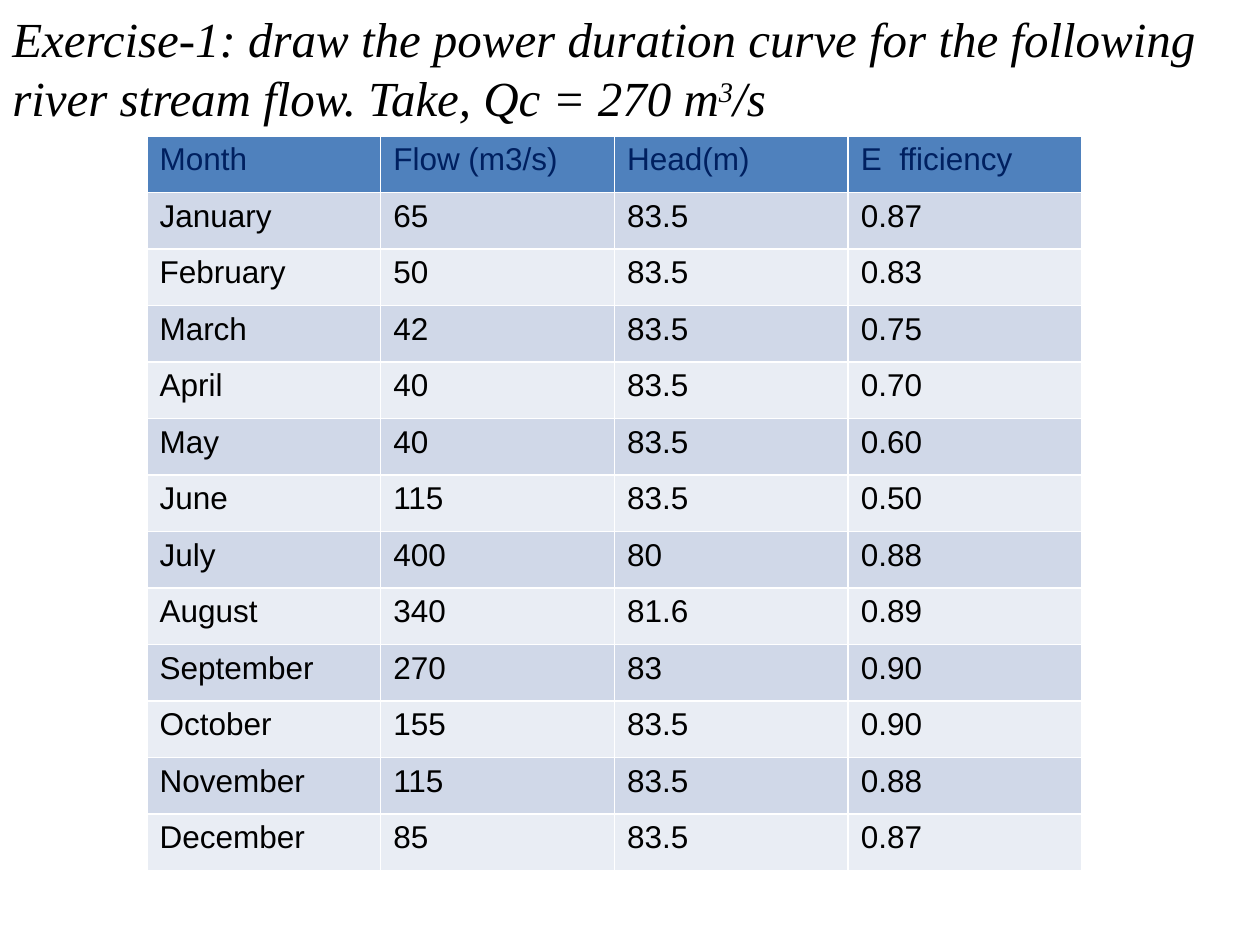
from pptx import Presentation
from pptx.dml.color import RGBColor
from pptx.util import Pt

PX = 914400 // 126
BLACK = RGBColor(0x00, 0x00, 0x00)
NAVY = RGBColor(0x00, 0x20, 0x60)
BLUE = RGBColor(0x4F, 0x81, 0xBD)
BAND_DARK = RGBColor(0xD0, 0xD8, 0xE8)
BAND_LIGHT = RGBColor(0xE9, 0xED, 0xF4)

SUPERSCRIPT = "30000"
TASK = [
    ("Exercise-1: draw the power duration curve for the following "
     "river stream flow. Take, Qc = 270 m", False),
    ("3", True),
    ("/s", False),
]
HEADERS = ("Month", "Flow (m3/s)", "Head(m)", "E  fficiency")
MONTHS = [
    ("January", "65", "83.5", "0.87"),
    ("February", "50", "83.5", "0.83"),
    ("March", "42", "83.5", "0.75"),
    ("April", "40", "83.5", "0.70"),
    ("May", "40", "83.5", "0.60"),
    ("June", "115", "83.5", "0.50"),
    ("July", "400", "80", "0.88"),
    ("August", "340", "81.6", "0.89"),
    ("September", "270", "83", "0.90"),
    ("October", "155", "83.5", "0.90"),
    ("November", "115", "83.5", "0.88"),
    ("December", "85", "83.5", "0.87"),
]


def set_font(font, name, size, color):
    font.name = name
    font.size = Pt(size)
    font.color.rgb = color


def add_task(page, left, top, width, height):
    box = page.shapes.add_textbox(left * PX, top * PX, width * PX, height * PX)
    frame = box.text_frame
    frame.word_wrap = True
    frame.margin_top = 9 * PX
    para = frame.paragraphs[0]
    set_font(para.font, "Times New Roman", 28, BLACK)
    para.font.italic = True
    for text, raised in TASK:
        span = para.add_run()
        span.text = text
        if raised:
            span._r.get_or_add_rPr().set("baseline", SUPERSCRIPT)


def add_flow_table(page, left, top, width, height):
    rows = [HEADERS, *MONTHS]
    table = page.shapes.add_table(
        len(rows), len(HEADERS), left * PX, top * PX, width * PX, height * PX
    ).table
    for row_index, values in enumerate(rows):
        if row_index == 0:
            fill, color = BLUE, NAVY
        else:
            fill, color = (BAND_DARK if row_index % 2 else BAND_LIGHT), BLACK
        for column_index, value in enumerate(values):
            cell = table.cell(row_index, column_index)
            cell.fill.solid()
            cell.fill.fore_color.rgb = fill
            cell.text = value
            para = cell.text_frame.paragraphs[0]
            set_font(para.font, "Arial", 18, color)
            para.font.bold = False


def main():
    deck = Presentation()
    deck.slide_width = 1260 * PX
    deck.slide_height = 945 * PX
    page = deck.slides.add_slide(deck.slide_layouts[6])
    add_task(page, 0, 0, 1260, 945)
    add_flow_table(page, 147, 136, 935, 735)
    deck.save("out.pptx")


if __name__ == "__main__":
    main()
